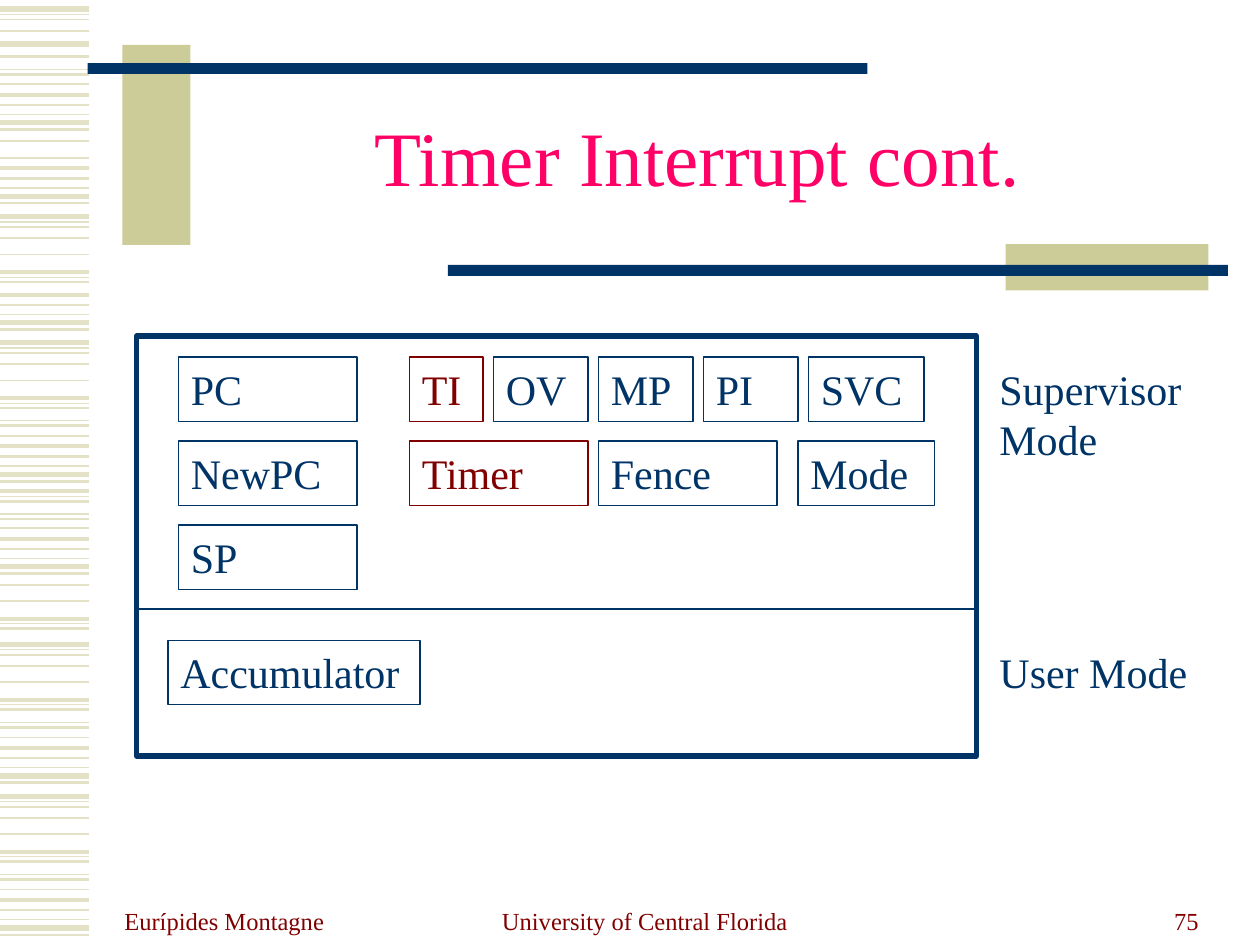
from lxml import etree
from pptx import Presentation
from pptx import util as u
from pptx.dml import color
from pptx.enum import shapes, text
from pptx.oxml import ns

COLORS = {"navy": "003366", "maroon": "800000", "pink": "FF0066",
          "khaki": "CCCC99", "stripe": "E3E2C7"}
FONT = "Times New Roman"
ROW_HEIGHT = 36.72

# (offset, weight) of each line in the two repeating stripe groups
SHORT_GROUP = [(0, 1), (6, 2.25), (11.8, 1.5), (17.2, 0.75), (22, 3), (25.9, 1.5)]
LONG_GROUP = [(0, 3), (3, 0.75), (6, 1), (12.4, 1), (21.6, 1), (31.7, 2.25),
              (34.6, 0.75), (37.4, 1.5), (44.6, 0.75), (47.5, 1.5)]
STRIPES = [
    (5.2, LONG_GROUP[:4]), (25.2, [(0, 3)]), (-5, LONG_GROUP[7:]),
    (48.2, SHORT_GROUP), (80.6, [(0, 1)]), (90.2, SHORT_GROUP),
    (123.8, LONG_GROUP[:8]), (162.5, SHORT_GROUP[1:]), (195.8, LONG_GROUP),
    (249.1, SHORT_GROUP), (249.1, LONG_GROUP[5:]), (301.9, SHORT_GROUP),
    (321.8, LONG_GROUP[3:8]), (368.1, LONG_GROUP), (421.4, SHORT_GROUP),
    (455, LONG_GROUP), (508.3, SHORT_GROUP),
]
BARS = [
    (70, 25.7, 38.9, 114.3, "khaki"), (50, 36, 445.7, 6.2, "navy"),
    (574.6, 139.5, 116, 26.5, "khaki"), (256, 151.4, 445.7, 6.2, "navy"),
]
TITLE = ("Timer Interrupt cont.", 108, 48, 581, 90)
FOOTERS = [
    ("Eurípides Montagne", 64, 150, "LEFT"),
    ("University of Central Florida", 247, 243, "CENTER"),
    ("75", 519, 173, "RIGHT"),
]
CPU_FRAME = (78, 192, 480, 240)
MODE_DIVIDER = 348
REGISTERS = {
    204: [("PC", 102, 102, "navy"), ("TI", 234, 42, "maroon"),
          ("OV", 282, 54, "navy"), ("MP", 342, 54, "navy"),
          ("PI", 402, 54, "navy"), ("SVC", 462, 66, "navy")],
    252: [("NewPC", 102, 102, "navy"), ("Timer", 234, 102, "maroon"),
          ("Fence", 342, 102, "navy"), ("Mode", 456, 78, "navy")],
    300: [("SP", 102, 102, "navy")],
    366: [("Accumulator", 96, 144, "navy")],
}
MODES = [("Supervisor Mode", 204, 64.8), ("User Mode", 366, 36)]


def rgb(name):
    return color.RGBColor.from_string(COLORS[name])


def add_line(page, left, top, width, tint, weight):
    line = page.shapes.add_connector(
        shapes.MSO_CONNECTOR.STRAIGHT,
        u.Pt(left), u.Pt(top), u.Pt(left + width), u.Pt(top))
    line.line.color.rgb = rgb(tint)
    line.line.width = u.Pt(weight)
    etree.SubElement(line._element.spPr, ns.qn("a:effectLst"))


def add_rect(page, left, top, width, height, fill=None, outline=None, weight=0.75):
    rect = page.shapes.add_shape(
        shapes.MSO_SHAPE.RECTANGLE,
        u.Pt(left), u.Pt(top), u.Pt(width), u.Pt(height))
    rect.shadow.inherit = False
    if fill:
        rect.fill.solid()
        rect.fill.fore_color.rgb = rgb(fill)
    else:
        rect.fill.background()
    if outline:
        rect.line.color.rgb = rgb(outline)
        rect.line.width = u.Pt(weight)
    else:
        rect.line.fill.background()
    return rect


def add_box(page, left, top, width, height):
    return page.shapes.add_textbox(u.Pt(left), u.Pt(top), u.Pt(width), u.Pt(height))


def write(box, words, size, tint, align="LEFT", anchor="TOP"):
    frame = box.text_frame
    frame.word_wrap = True
    frame.vertical_anchor = text.MSO_ANCHOR[anchor]
    para = frame.paragraphs[0]
    para.alignment = text.PP_ALIGN[align]
    span = para.add_run()
    span.text = words
    span.font.name = FONT
    span.font.size = u.Pt(size)
    span.font.color.rgb = rgb(tint)
    return para


def main():
    deck = Presentation()
    deck.slide_width, deck.slide_height = u.Pt(720), u.Pt(540)
    page = deck.slides.add_slide(deck.slide_layouts[6])

    for start, group in STRIPES:
        for offset, weight in group:
            add_line(page, 0, start + offset, 51, "stripe", weight)
    for *place, tint in BARS:
        add_rect(page, *place, fill=tint)

    for words, left, width, align in FOOTERS:
        write(add_box(page, left, 502, width, 36), words, 14, "maroon", align, "BOTTOM")
    words, *place = TITLE
    para = write(add_box(page, *place), words, 44, "pink", "CENTER", "MIDDLE")
    para.line_spacing = 0.85

    add_rect(page, *CPU_FRAME, outline="navy", weight=3)
    add_line(page, CPU_FRAME[0], MODE_DIVIDER, CPU_FRAME[2], "navy", 0.75)
    for top, row in REGISTERS.items():
        for words, left, width, tint in row:
            box = add_rect(page, left, top, width, ROW_HEIGHT, outline=tint)
            write(box, words, 24, tint)
    for words, top, height in MODES:
        write(add_box(page, 564, top, 126, height), words, 24, "navy")

    deck.save("out.pptx")


if __name__ == "__main__":
    main()
